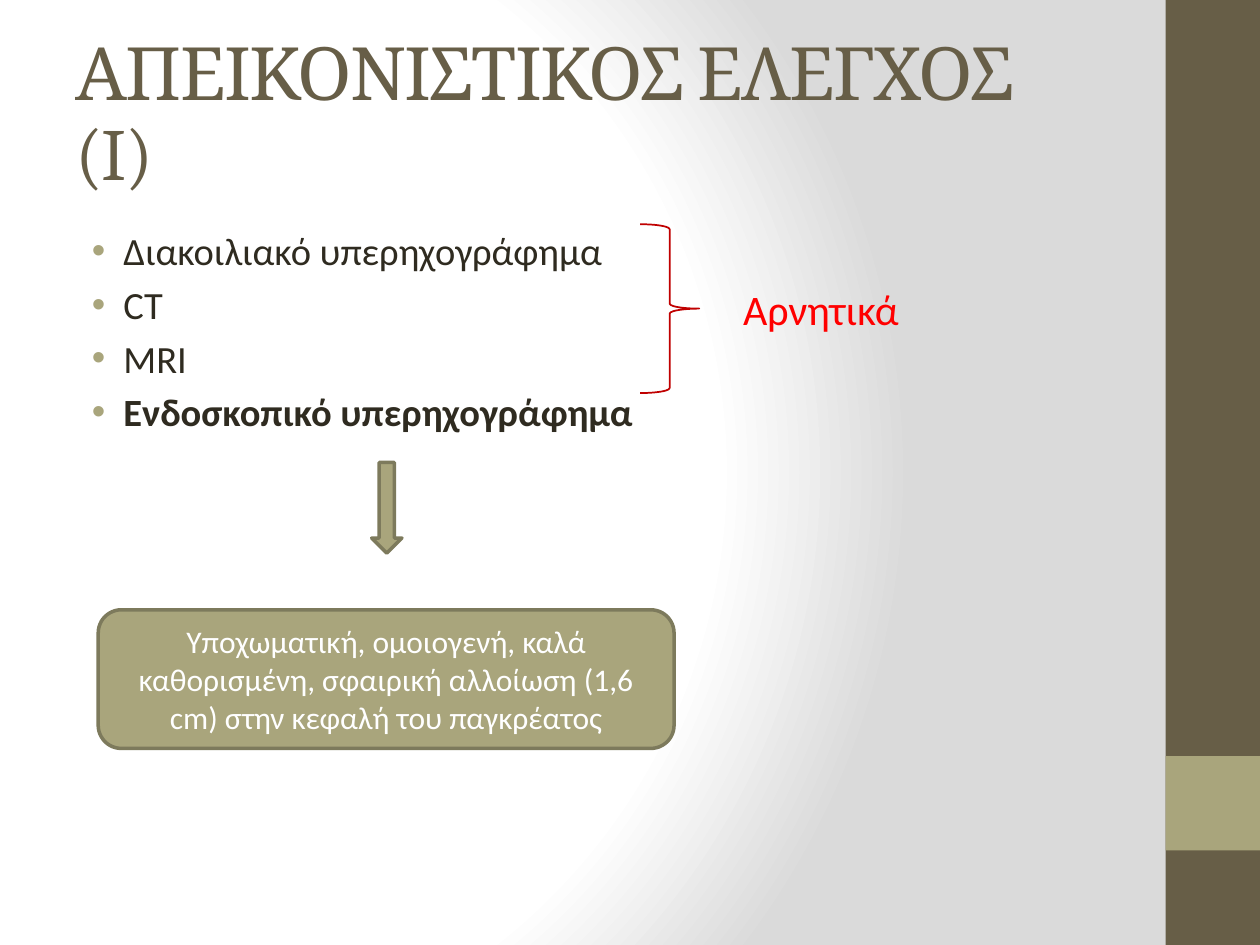
from dataclasses import dataclass

from pptx import Presentation
from pptx.dml.color import RGBColor
from pptx.enum.shapes import MSO_SHAPE as Shape
from pptx.enum.text import MSO_ANCHOR as Anchor, MSO_AUTO_SIZE as AutoSize, PP_ALIGN as Align
from pptx.oxml import parse_xml
from pptx.oxml.ns import nsdecls
from pptx.util import Inches, Pt


@dataclass(frozen=True)
class Theme:
    """Colours, fonts and type sizes of the slide."""
    brown: str = "675E47"
    olive: str = "A9A57C"
    olive_edge: str = "7D7A5C"
    ink: str = "2F2B20"
    white: str = "FFFFFF"
    grey: str = "DADADA"
    brace: str = "C00000"
    alert: str = "FF0000"
    heading_font: str = "Cambria"
    body_font: str = "Calibri"
    title_size: int = 42
    list_size: int = 22
    label_size: int = 24
    box_size: int = 18


class SlideBuilder:
    """Draws styled elements on one slide, on a grid of one-inch columns and rows."""

    def __init__(self, presentation, theme):
        self.theme = theme
        self.slide = presentation.slides.add_slide(presentation.slide_layouts[1])

    def place(self, shape, area):
        """Move a shape to (column, row, columns wide, rows high)."""
        shape.left, shape.top, shape.width, shape.height = map(Inches, area)

    def style(self, paragraph, size, color, font=None, bold=None):
        """Format every run of a paragraph."""
        for run in paragraph.runs:
            run.font.size = Pt(size)
            run.font.name = font or self.theme.body_font
            run.font.bold = bold
            run.font.color.rgb = RGBColor.from_string(color)

    def background(self):
        """Fill the slide with a circular gradient."""
        stops = ((0, self.theme.white), (75, self.theme.white), (100, self.theme.grey))
        stop_xml = "".join(
            f'<a:gs pos="{share * 1000}"><a:srgbClr val="{color}"/></a:gs>' for share, color in stops
        )
        self.slide.element.cSld.insert(0, parse_xml(
            f'<p:bg {nsdecls("p", "a")}><p:bgPr><a:gradFill rotWithShape="1">'
            f'<a:gsLst>{stop_xml}</a:gsLst><a:path path="circle">'
            '<a:fillToRect l="20000" t="50000" r="100000" b="50000"/></a:path>'
            '</a:gradFill><a:effectLst/></p:bgPr></p:bg>'
        ))

    def title(self, text, area):
        """Write the slide title."""
        title = self.slide.shapes.title
        self.place(title, area)
        frame = title.text_frame
        frame.text = text
        frame.auto_size = AutoSize.NONE
        frame.vertical_anchor = Anchor.MIDDLE
        paragraph = frame.paragraphs[0]
        paragraph.alignment = Align.LEFT
        paragraph.line_spacing = 0.9
        self.style(paragraph, self.theme.title_size, self.theme.brown, self.theme.heading_font)
        for run in paragraph.runs:
            run.font._element.set("spc", "-100")

    def bullets(self, items, area, bold_item):
        """Write the bulleted list, with one item in bold."""
        body = self.slide.placeholders[1]
        self.place(body, area)
        frame = body.text_frame
        frame.text = "\n".join(items)
        frame.auto_size = AutoSize.NONE
        for paragraph in frame.paragraphs:
            self.style(paragraph, self.theme.list_size, self.theme.ink,
                       bold=paragraph.text == bold_item)
            properties = paragraph._p.get_or_add_pPr()
            properties.set("marL", str(Inches(0.38)))
            properties.set("indent", str(Inches(-0.25)))
            for markup in (
                f'<a:buClr {nsdecls("a")}><a:srgbClr val="{self.theme.olive}"/></a:buClr>',
                f'<a:buFont {nsdecls("a")} typeface="Arial"/>',
                f'<a:buChar {nsdecls("a")} char="•"/>',
            ):
                properties.append(parse_xml(markup))

    def shape(self, kind, area, fill=None, line=None, weight=2):
        """Add a preset shape with optional fill and line."""
        shape = self.slide.shapes.add_shape(kind, *map(Inches, area))
        shape.shadow.inherit = False
        if fill:
            shape.fill.solid()
            shape.fill.fore_color.rgb = RGBColor.from_string(fill)
        else:
            shape.fill.background()
        if line:
            shape.line.color.rgb = RGBColor.from_string(line)
            shape.line.width = Pt(weight)
        else:
            shape.line.fill.background()
        return shape

    def box(self, text, area):
        """Add a rounded box with centred text."""
        box = self.shape(Shape.ROUNDED_RECTANGLE, area, self.theme.olive, self.theme.olive_edge)
        frame = box.text_frame
        frame.text = text
        frame.word_wrap = True
        frame.vertical_anchor = Anchor.MIDDLE
        frame.paragraphs[0].alignment = Align.CENTER
        self.style(frame.paragraphs[0], self.theme.box_size, self.theme.white)

    def label(self, text, area):
        """Add a wrapping text label."""
        frame = self.slide.shapes.add_textbox(*map(Inches, area)).text_frame
        frame.text = text
        frame.word_wrap = True
        frame.auto_size = AutoSize.SHAPE_TO_FIT_TEXT
        self.style(frame.paragraphs[0], self.theme.label_size, self.theme.alert)


def main():
    """Build and save the slide."""
    presentation = Presentation()
    presentation.slide_width, presentation.slide_height = Inches(10), Inches(7.5)
    theme = Theme()
    builder = SlideBuilder(presentation, theme)
    endoscopic = "Ενδοσκοπικό υπερηχογράφημα"

    builder.background()
    builder.shape(Shape.RECTANGLE, (9.25, 0, 0.75, 7.5), theme.brown)
    builder.shape(Shape.RECTANGLE, (9.25, 6, 0.75, 0.75), theme.olive)
    builder.title("ΑΠΕΙΚΟΝΙΣΤΙΚΟΣ ΕΛΕΓΧΟΣ (I)", (0.5, 0.3, 8.33, 1.25))
    builder.bullets(("Διακοιλιακό υπερηχογράφημα", "CT", "MRI", endoscopic),
                    (0.5, 1.75, 8.33, 5.25), endoscopic)
    builder.shape(Shape.RIGHT_BRACE, (5.08, 1.78, 0.47, 1.34), line=theme.brace, weight=1)
    builder.label("Αρνητικά", (5.8, 2.2, 3.23, 0.5))
    builder.shape(Shape.DOWN_ARROW, (2.95, 3.67, 0.24, 0.72), theme.olive, theme.olive_edge)
    builder.box("Υποχωματική, ομοιογενή, καλά καθορισμένη, σφαιρική αλλοίωση (1,6 cm) "
                "στην κεφαλή του παγκρέατος", (0.78, 4.84, 4.57, 1.1))
    presentation.save("out.pptx")


if __name__ == "__main__":
    main()
